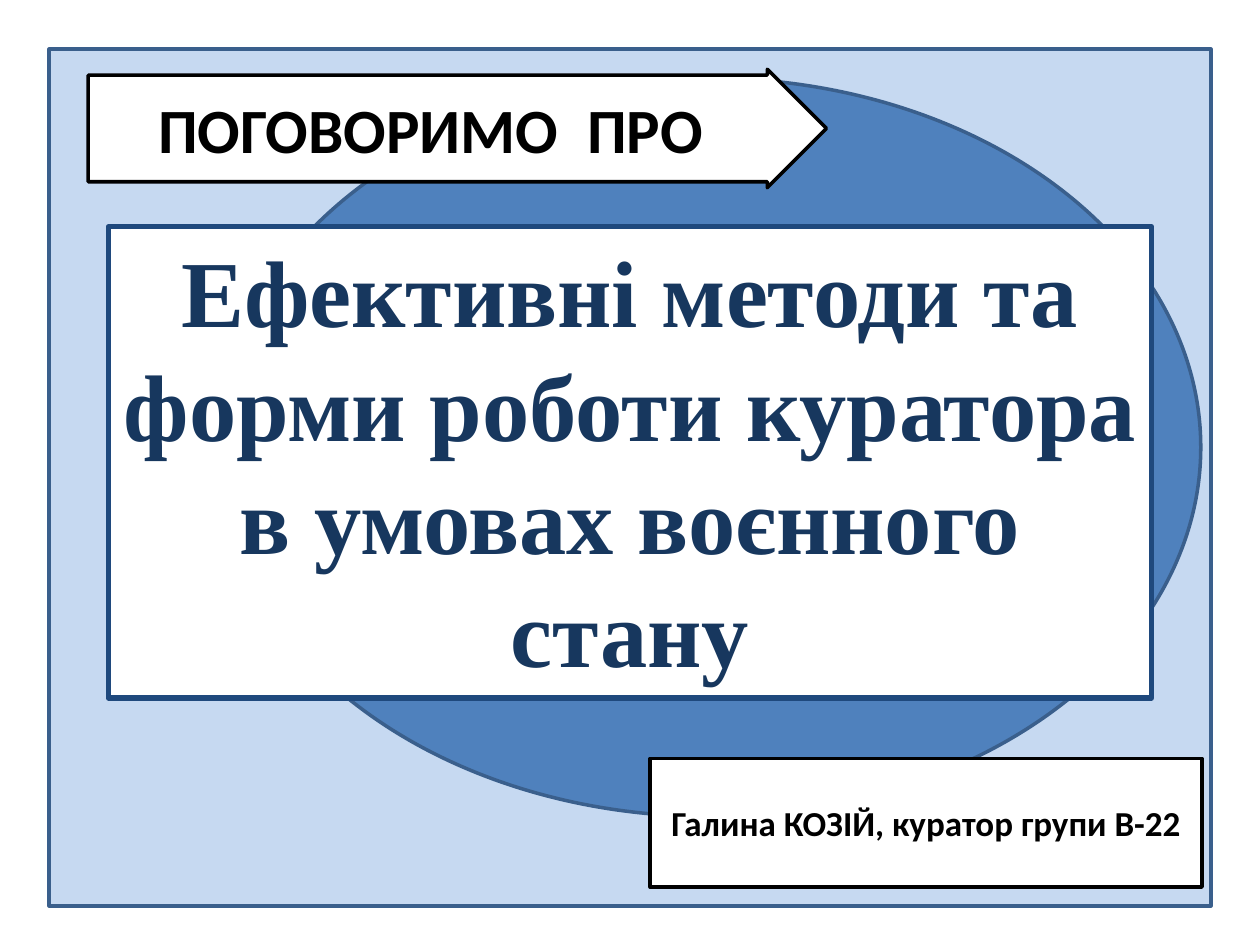
from pptx import Presentation
from pptx.dml.color import RGBColor
from pptx.enum.shapes import MSO_SHAPE
from pptx.enum.text import MSO_ANCHOR, MSO_AUTO_SIZE, PP_ALIGN
from pptx.util import Inches, Pt

WIDTH, HEIGHT = 10, 7.5
COLORS = {
    "white": "FFFFFF",
    "black": "000000",
    "pale_blue": "C6D9F1",
    "blue": "4F81BD",
    "outline_blue": "3A5F8C",
    "frame_blue": "1F497D",
    "title_blue": "17375E",
}


def color(name):
    return RGBColor.from_string(COLORS[name])


def box(left, top, width, height):
    """Turn inches on the slide into position and size."""
    return [Inches(value) for value in (left, top, width, height)]


def paint(shape, fill, line, line_width):
    shape.fill.solid()
    shape.fill.fore_color.rgb = color(fill)
    shape.line.color.rgb = color(line)
    shape.line.width = Pt(line_width)


def add_panel(slide, kind, area, fill, line):
    shape = slide.shapes.add_shape(kind, *box(*area))
    shape.shadow.inherit = False
    paint(shape, fill, line, 2)
    return shape


def write(shape, text, size, font_name, font_color, anchor):
    """Put one bold, centred paragraph in the shape."""
    frame = shape.text_frame
    frame.word_wrap = True
    frame.vertical_anchor = anchor
    frame.text = text
    paragraph = frame.paragraphs[0]
    paragraph.alignment = PP_ALIGN.CENTER
    paragraph.font.size = Pt(size)
    paragraph.font.name = font_name
    paragraph.font.bold = True
    paragraph.font.color.rgb = color(font_color)


def add_label(slide, kind, area, text, size):
    label = add_panel(slide, kind, area, "white", "black")
    write(label, text, size, "Calibri", "black", MSO_ANCHOR.MIDDLE)
    return label


def place_title(slide, area, text):
    """Frame the title and bring it in front of the backdrop."""
    title = slide.shapes.title
    title.left, title.top, title.width, title.height = box(*area)
    paint(title, "white", "frame_blue", 3)
    write(title, text, 54, "Times New Roman", "title_blue", MSO_ANCHOR.TOP)
    title.text_frame.auto_size = MSO_AUTO_SIZE.SHAPE_TO_FIT_TEXT
    title.element.getparent().append(title.element)


def main():
    presentation = Presentation()
    presentation.slide_width = Inches(WIDTH)
    presentation.slide_height = Inches(HEIGHT)
    slide = presentation.slides.add_slide(presentation.slide_layouts[5])

    add_panel(slide, MSO_SHAPE.RECTANGLE, (0.39, 0.39, 9.22, 6.8),
              "pale_blue", "outline_blue")
    add_panel(slide, MSO_SHAPE.OVAL, (1.72, 0.62, 7.81, 5.86),
              "blue", "outline_blue")
    place_title(slide, (0.86, 1.8, 8.28, 3.74),
                "Ефективні методи та форми роботи куратора "
                "в умовах воєнного стану")
    arrow = add_label(slide, MSO_SHAPE.RIGHT_ARROW, (0.7, 0.55, 5.86, 0.94),
                      "ПОГОВОРИМО  ПРО", 36)
    arrow.adjustments[0] = 0.9
    add_label(slide, MSO_SHAPE.RECTANGLE, (5.16, 6.02, 4.38, 1.02),
              "Галина КОЗІЙ, куратор групи В-22", 20)

    presentation.save("out.pptx")


if __name__ == "__main__":
    main()
